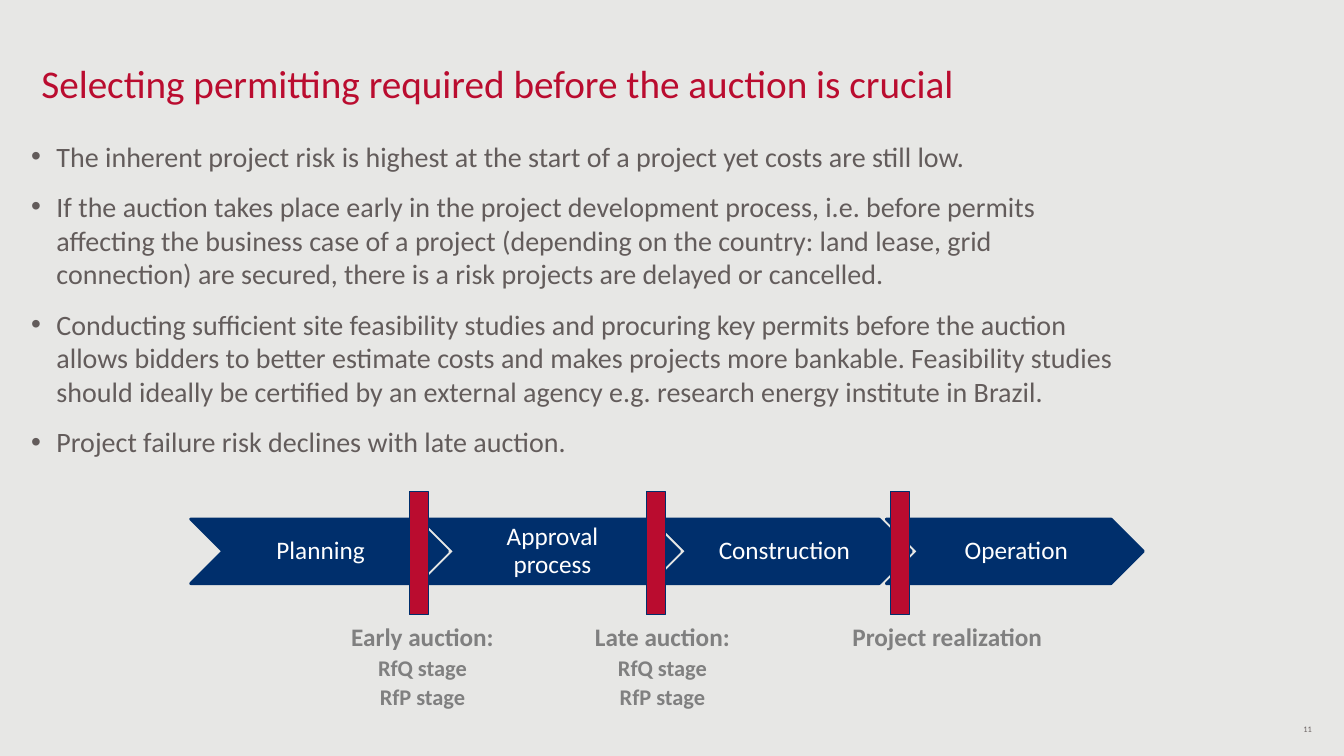
from dataclasses import dataclass

from lxml import etree
from pptx import Presentation
from pptx.dml.color import RGBColor
from pptx.enum.shapes import MSO_SHAPE
from pptx.enum.text import MSO_ANCHOR, MSO_AUTO_SIZE, PP_ALIGN
from pptx.oxml.ns import qn
from pptx.util import Inches, Pt

CHEVRON, RECTANGLE = MSO_SHAPE.CHEVRON, MSO_SHAPE.RECTANGLE
LEFT, CENTER, RIGHT = PP_ALIGN.LEFT, PP_ALIGN.CENTER, PP_ALIGN.RIGHT
TOP, MIDDLE, BOTTOM = MSO_ANCHOR.TOP, MSO_ANCHOR.MIDDLE, MSO_ANCHOR.BOTTOM
NO_AUTOFIT = MSO_AUTO_SIZE.NONE

TITLE = "Selecting permitting required before the auction is crucial"
POINTS = [
    "The inherent project risk is highest at the start of a project yet costs are still low.",
    "If the auction takes place early in the project development process, i.e. before permits "
    "affecting the business case of a project (depending on the country: land lease, grid "
    "connection) are secured, there is a risk projects are delayed or cancelled.",
    "Conducting sufficient site feasibility studies and procuring key permits before the auction "
    "allows bidders to better estimate costs and makes projects more bankable. Feasibility studies "
    "should ideally be certified by an external agency e.g. research energy institute in Brazil.",
    "Project failure risk declines with late auction.",
]
PHASES = ["Planning", "Approval process", "Construction", "Operation"]
AUCTION_STAGES = ["RfQ stage", "RfP stage"]
MILESTONES = [
    {"bar": 4.06, "left": 3.25, "width": 1.88, "lines": ["Early auction:", *AUCTION_STAGES]},
    {"bar": 6.41, "left": 5.63, "width": 1.88, "lines": ["Late auction:", *AUCTION_STAGES]},
    {"bar": 8.83, "left": 8.16, "width": 2.47, "lines": ["Project realization"]},
]
PAGE = "11"


@dataclass(frozen=True)
class Theme:
    font: str = "Calibri"
    background: str = "E7E7E5"
    navy: str = "002F6C"
    red: str = "BA0C2F"
    white: str = "FFFFFF"
    body: str = "635C5B"
    caption: str = "808080"
    page: str = "6C6463"
    title_size: float = 28
    body_size: float = 20
    label_size: float = 18
    stage_size: float = 16
    page_size: float = 6


THEME = Theme()
PHASE_LEFT, PHASE_TOP, PHASE_STEP = 1.89, 5.15, 2.3
PHASE_WIDTH, PHASE_HEIGHT = 2.55, 0.64
LABEL_SHARE = 0.6
BAR_TOP, BAR_WIDTH, BAR_HEIGHT = 4.88, 0.19, 1.22
CAPTION_TOP = 6.12


def style(paragraph, size, color, align=LEFT, bold=False):
    paragraph.alignment = align
    font = paragraph.font
    font.name, font.size, font.bold = THEME.font, Pt(size), bold
    font.color.rgb = RGBColor.from_string(color)


def place(shape, left, top, width, height):
    shape.left, shape.top = Inches(left), Inches(top)
    shape.width, shape.height = Inches(width), Inches(height)


def set_frame(frame, anchor, insets=(0.1, 0.05, 0.1, 0.05)):
    frame.word_wrap = True
    frame.auto_size = NO_AUTOFIT
    frame.vertical_anchor = anchor
    (frame.margin_left, frame.margin_top,
     frame.margin_right, frame.margin_bottom) = map(Inches, insets)


def add_block(parent, preset, box, color, line_width=0.75):
    block = parent.shapes.add_shape(preset, *map(Inches, box))
    block.shadow.inherit = False
    block.fill.solid()
    block.fill.fore_color.rgb = RGBColor.from_string(color)
    block.line.color.rgb = RGBColor.from_string(THEME.navy)
    block.line.width = Pt(line_width)
    return block


def add_title(slide):
    title = slide.shapes.title
    place(title, 0.31, 0, 12.71, 1.11)
    set_frame(title.text_frame, BOTTOM)
    title.text_frame.text = TITLE
    style(title.text_frame.paragraphs[0], THEME.title_size, THEME.red)


def add_points(slide):
    body = slide.placeholders[1]
    place(body, 0.31, 1.38, 10.77, 3.5)
    set_frame(body.text_frame, TOP, (0, 0, 0, 0))
    body.text_frame.text = "\n".join(POINTS)
    for point in body.text_frame.paragraphs:
        properties = point._p.get_or_add_pPr()
        properties.set("marL", str(Inches(0.25)))
        properties.set("indent", str(-Inches(0.25)))
        etree.SubElement(properties, qn("a:buFont")).set("typeface", "Arial")
        etree.SubElement(properties, qn("a:buChar")).set("char", "•")
        point.space_before, point.space_after = Pt(0), Pt(12)
        style(point, THEME.body_size, THEME.body)


def add_phases(timeline):
    label_width = PHASE_WIDTH * LABEL_SHARE
    for index, phase in enumerate(PHASES):
        left = PHASE_LEFT + index * PHASE_STEP
        add_block(timeline, CHEVRON, (left, PHASE_TOP, PHASE_WIDTH, PHASE_HEIGHT), THEME.navy, 2)
        label_left = left + (PHASE_WIDTH - label_width) / 2
        label = add_block(timeline, RECTANGLE,
                          (label_left, PHASE_TOP, label_width, PHASE_HEIGHT), THEME.navy)
        set_frame(label.text_frame, MIDDLE, (0.04, 0.01, 0.01, 0.01))
        label.text_frame.text = phase
        paragraph = label.text_frame.paragraphs[0]
        paragraph.line_spacing = 0.9
        style(paragraph, THEME.label_size, THEME.white, CENTER)


def add_milestones(timeline):
    for milestone in MILESTONES:
        lines = milestone["lines"]
        height = 0.4 + 0.28 * (len(lines) - 1)
        caption = timeline.shapes.add_textbox(
            *map(Inches, (milestone["left"], CAPTION_TOP, milestone["width"], height)))
        set_frame(caption.text_frame, TOP)
        caption.text_frame.text = "\n".join(lines)
        for index, paragraph in enumerate(caption.text_frame.paragraphs):
            paragraph.line_spacing = Pt(21)
            size = THEME.stage_size if index else THEME.label_size
            style(paragraph, size, THEME.caption, CENTER, bold=True)
        add_block(timeline, RECTANGLE,
                  (milestone["bar"], BAR_TOP, BAR_WIDTH, BAR_HEIGHT), THEME.red)


def add_page_number(slide):
    number = slide.shapes.add_textbox(*map(Inches, (10, 7.13, 3.11, 0.2)))
    set_frame(number.text_frame, MIDDLE)
    number.text_frame.text = PAGE
    style(number.text_frame.paragraphs[0], THEME.page_size, THEME.page, RIGHT)


def main():
    presentation = Presentation()
    presentation.slide_width, presentation.slide_height = Inches(13.33), Inches(7.5)
    slide = presentation.slides.add_slide(presentation.slide_layouts[1])
    slide.background.fill.solid()
    slide.background.fill.fore_color.rgb = RGBColor.from_string(THEME.background)
    add_title(slide)
    add_points(slide)
    timeline = slide.shapes.add_group_shape()
    add_phases(timeline)
    add_milestones(timeline)
    add_page_number(slide)
    presentation.save("out.pptx")


if __name__ == "__main__":
    main()
